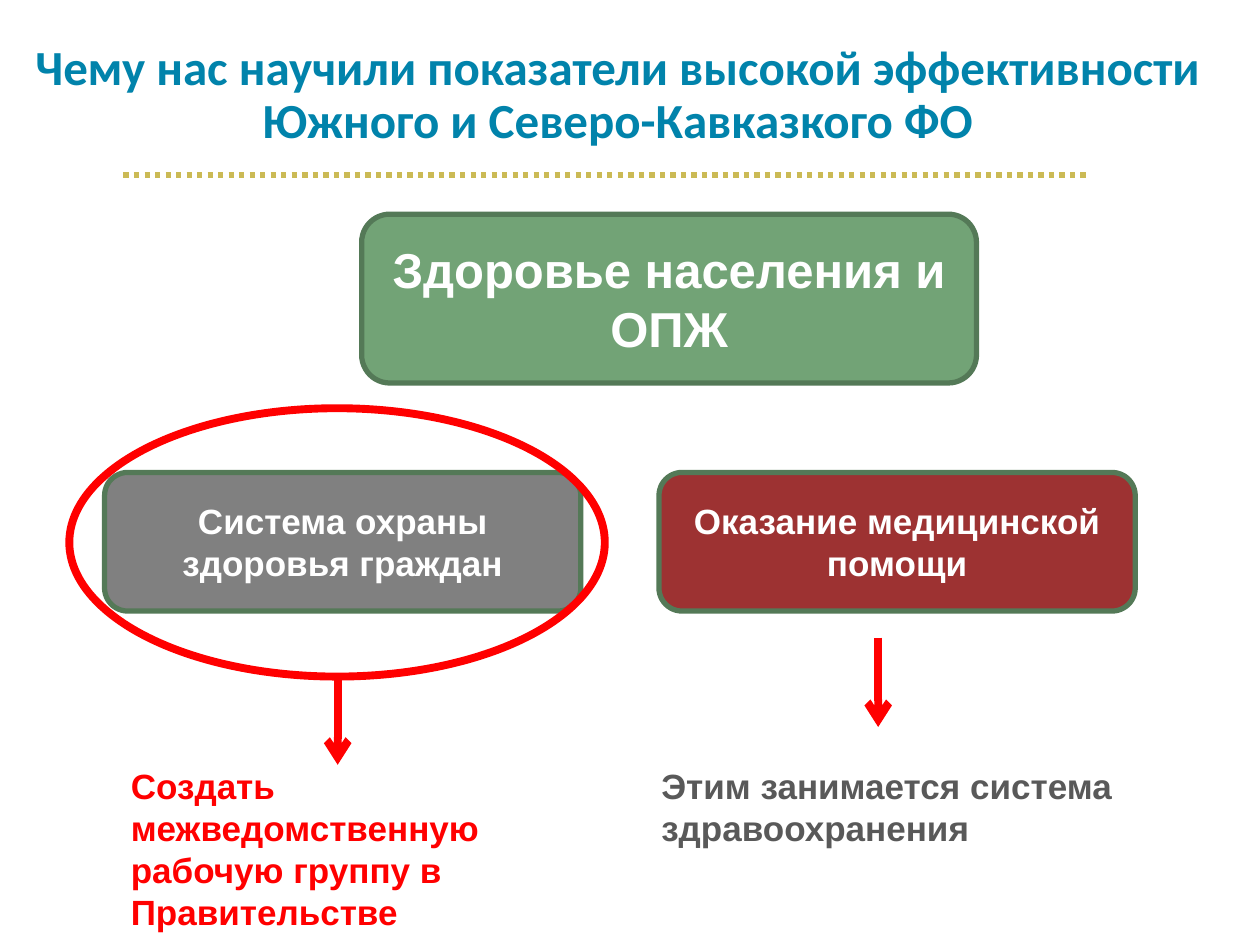
from pptx import Presentation
from pptx.dml.color import RGBColor
from pptx.enum.dml import MSO_LINE
from pptx.enum.shapes import MSO_CONNECTOR, MSO_SHAPE
from pptx.enum.text import MSO_ANCHOR, MSO_AUTO_SIZE, PP_ALIGN
from pptx.oxml.ns import qn
from pptx.util import Inches, Pt
from lxml.etree import SubElement

COLORS = {
    "title": "0183AB", "divider": "CBBA55", "border": "547957",
    "green": "72A376", "gray": "808080", "burgundy": "9D3232",
    "white": "FFFFFF", "red": "FF0000", "text": "595959",
}
TITLE = "Чему нас научили показатели высокой эффективности Южного и Северо-Кавказкого ФО"
TITLE_BOX = (0.18, 0.13, 9.64, 1.1)
BOXES = [
    ("Здоровье населения и ОПЖ", (2.87, 1.7, 4.88, 1.34), "green", 28),
    ("Система охраны здоровья граждан", (0.83, 3.75, 3.78, 1.1), "gray", 20),
    ("Оказание медицинской помощи", (5.23, 3.75, 3.78, 1.1), "burgundy", 20),
]
HIGHLIGHT = (0.55, 3.24, 4.25, 2.13)
ARROW_STARTS = [(2.68, 5.36), (6.97, 5.06)]
ARROW_LENGTH = 0.71
NOTES = [
    ("Этим занимается система здравоохранения", (5.15, 6.02, 3.81, 0.77), "text"),
    ("Создать межведомственную рабочую группу в Правительстве", (0.94, 6.02, 3.86, 1.45), "red"),
]


def rgb(name):
    return RGBColor.from_string(COLORS[name])


def inches(values):
    return [Inches(value) for value in values]


def set_format(target, values):
    for name, value in values.items():
        setattr(target, name, value)


def write(shape, text, size, color, font="Arial", align=PP_ALIGN.LEFT, **frame_format):
    frame = shape.text_frame
    set_format(frame, {"word_wrap": True, **frame_format})
    paragraph = frame.paragraphs[0]
    paragraph.alignment = align
    run = paragraph.add_run()
    run.text = text
    set_format(run.font, {"name": font, "size": Pt(size), "bold": True})
    run.font.color.rgb = rgb(color)
    return paragraph


def set_line(shape, color, width):
    shape.line.color.rgb = rgb(color)
    shape.line.width = Pt(width)


def add_line(slide, start, end, color, width):
    line = slide.shapes.add_connector(MSO_CONNECTOR.STRAIGHT, *inches(start + end))
    set_line(line, color, width)
    return line


def remove_shadow(line):
    SubElement(line._element.spPr, qn("a:effectLst"))


def add_arrow(slide, start):
    x, y = start
    arrow = add_line(slide, start, (x, y + ARROW_LENGTH), "red", 4.5)
    SubElement(arrow.line._get_or_add_ln(), qn("a:tailEnd"), type="arrow")
    remove_shadow(arrow)


def add_shape(slide, kind, box, color, width):
    shape = slide.shapes.add_shape(kind, *inches(box))
    shape.shadow.inherit = False
    set_line(shape, color, width)
    return shape


def main():
    presentation = Presentation()
    set_format(presentation, {"slide_width": Inches(10), "slide_height": Inches(7.5)})
    slide = presentation.slides.add_slide(presentation.slide_layouts[5])

    divider = add_line(slide, (0.98, 1.39), (8.62, 1.39), "divider", 3)
    divider.line.dash_style = MSO_LINE.ROUND_DOT
    remove_shadow(divider)

    title = slide.shapes.title
    set_format(title, dict(zip(("left", "top", "width", "height"), inches(TITLE_BOX))))
    margins = dict(zip(("margin_left", "margin_top", "margin_right", "margin_bottom"),
                       inches((0.05, 0.05, 0.25, 0.05))))
    paragraph = write(title, TITLE, 28, "title", "Calibri", PP_ALIGN.CENTER,
                      vertical_anchor=MSO_ANCHOR.BOTTOM, auto_size=MSO_AUTO_SIZE.NONE, **margins)
    paragraph.line_spacing = 0.9

    for text, box, fill, size in BOXES:
        shape = add_shape(slide, MSO_SHAPE.ROUNDED_RECTANGLE, box, "border", 3)
        shape.fill.solid()
        shape.fill.fore_color.rgb = rgb(fill)
        write(shape, text, size, "white", align=PP_ALIGN.CENTER, vertical_anchor=MSO_ANCHOR.MIDDLE)

    highlight = add_shape(slide, MSO_SHAPE.OVAL, HIGHLIGHT, "red", 4.5)
    highlight.fill.background()

    for start in ARROW_STARTS:
        add_arrow(slide, start)

    for text, box, color in NOTES:
        note = slide.shapes.add_textbox(*inches(box))
        write(note, text, 20, color, auto_size=MSO_AUTO_SIZE.SHAPE_TO_FIT_TEXT)

    presentation.save("out.pptx")


if __name__ == "__main__":
    main()
